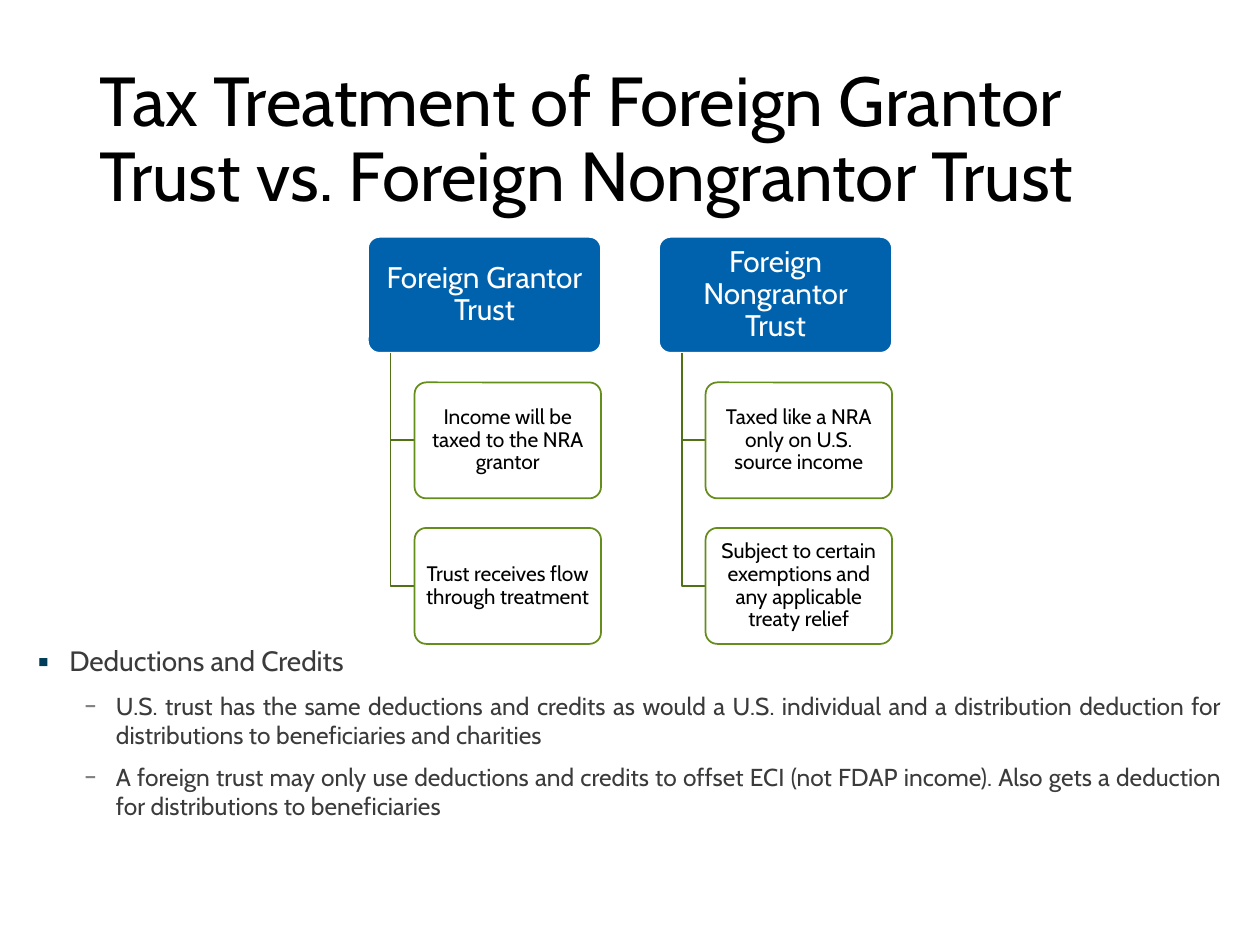
from pptx import Presentation
from pptx.dml.color import RGBColor
from pptx.enum.shapes import MSO_SHAPE as Shape
from pptx.enum.text import MSO_ANCHOR as Anchor, MSO_AUTO_SIZE as Auto, PP_ALIGN as Align
from pptx.oxml.ns import qn
from pptx.util import Inches, Pt
from lxml.etree import SubElement

FONT = "Cabin"
BLACK = RGBColor(0x00, 0x00, 0x00)
WHITE = RGBColor(0xFF, 0xFF, 0xFF)
BLUE = RGBColor(0x00, 0x62, 0xAC)
GREEN = RGBColor(0x65, 0x8D, 0x1B)
OLIVE = RGBColor(0x51, 0x71, 0x16)
GRAY = RGBColor(0x3B, 0x3B, 0x3B)
NAVY = RGBColor(0x01, 0x3C, 0x59)
SILVER = RGBColor(0x80, 0x80, 0x80)


def style(para, size, color, align):
    para.alignment = align
    para.font.name = FONT
    para.font.size = Pt(size)
    para.font.color.rgb = color


def add_box(x, y, width, text, size, fill, line, color):
    box = slide.shapes.add_shape(
        Shape.ROUNDED_RECTANGLE, Inches(x), Inches(y), Inches(width), Inches(HIGH))
    box.adjustments[0] = 0.1
    box.shadow.inherit = False
    box.fill.solid()
    box.fill.fore_color.rgb = fill
    box.line.color.rgb = line
    box.line.width = Pt(1)
    frame = box.text_frame
    frame.word_wrap = True
    frame.vertical_anchor = Anchor.MIDDLE
    frame.margin_left = frame.margin_right = Inches(0.06)
    frame.margin_top = frame.margin_bottom = Inches(0.04)
    para = frame.paragraphs[0]
    para.text = text
    para.line_spacing = 0.9
    style(para, size, color, Align.CENTER)
    return box


deck = Presentation()
deck.slide_width, deck.slide_height = Inches(10), Inches(7.5)
slide = deck.slides.add_slide(deck.slide_layouts[1])

# Title
title = slide.shapes.title
title.left, title.top = Inches(0.69), Inches(0.4)
title.width, title.height = Inches(8.62), Inches(1.45)
frame = title.text_frame
frame.auto_size = Auto.NONE
frame.vertical_anchor = Anchor.MIDDLE
para = frame.paragraphs[0]
para.text = "Tax Treatment of Foreign Grantor Trust vs. Foreign Nongrantor Trust"
para.line_spacing = 0.9
style(para, 39.6, BLACK, Align.LEFT)

# Two trust trees: a head box with leaf boxes hung below it
LEFT, TOP, STEP = 2.92, 1.88, 2.31
WIDE, HIGH, DROP = 1.85, 0.92, 1.155
STEM, INDENT = 0.18, 0.37
trees = [
    ("Foreign Grantor Trust",
     ["Income will be taxed to the NRA grantor",
      "Trust receives flow through treatment"]),
    ("Foreign Nongrantor Trust",
     ["Taxed like a NRA only on U.S. source income",
      "Subject to certain exemptions and any applicable treaty relief"]),
]
for col, (head, leaves) in enumerate(trees):
    x = LEFT + col * STEP
    add_box(x, TOP, WIDE, head, 17, BLUE, WHITE, WHITE)
    for row, leaf in enumerate(leaves, 1):
        y = TOP + row * DROP
        mid = y + HIGH / 2
        pen = slide.shapes.build_freeform(
            Inches(x + STEM), Inches(TOP + HIGH))
        pen.add_line_segments(
            [(Inches(x + STEM), Inches(mid)), (Inches(x + INDENT), Inches(mid))],
            close=False)
        elbow = pen.convert_to_shape()
        elbow.shadow.inherit = False
        elbow.fill.background()
        elbow.line.color.rgb = OLIVE
        elbow.line.width = Pt(1)
        box = add_box(x + INDENT, y, WIDE - INDENT, leaf, 12, WHITE, GREEN, BLACK)
        # Leaf fill is 90% opaque
        tint = box.fill._xPr.find(qn("a:solidFill"))[0]
        SubElement(tint, qn("a:alpha")).set("val", "90000")

# Bullet list
body = slide.placeholders[1]
body.left, body.top = Inches(0.3), Inches(5.11)
body.width, body.height = Inches(9.4), Inches(1.71)
frame = body.text_frame
frame.auto_size = Auto.NONE
frame.vertical_anchor = Anchor.TOP
frame.margin_left = frame.margin_right = 0
frame.margin_top = frame.margin_bottom = 0
items = [
    (0, "Deductions and Credits"),
    (1, "U.S. trust has the same deductions and credits as would a U.S. individual "
        "and a distribution deduction for distributions to beneficiaries and charities"),
    (1, "A foreign trust may only use deductions and credits to offset ECI "
        "(not FDAP income). Also gets a deduction for distributions to beneficiaries"),
]
levels = [(16, 0.25, "▪", NAVY), (14, 0.62, "–", SILVER)]
for i, (level, text) in enumerate(items):
    size, indent, mark, tone = levels[level]
    para = frame.add_paragraph() if i else frame.paragraphs[0]
    para.text = text
    para.level = level
    para.space_before = para.space_after = Pt(size / 4)
    props = para._p.get_or_add_pPr()
    props.set("marL", str(Inches(indent)))
    props.set("indent", str(-Inches(0.25)))
    tint = SubElement(props, qn("a:buClr"))
    SubElement(tint, qn("a:srgbClr")).set("val", str(tone))
    SubElement(props, qn("a:buFont")).set("typeface", FONT)
    SubElement(props, qn("a:buChar")).set("char", mark)
    style(para, size, GRAY, Align.JUSTIFY)

deck.save("out.pptx")
